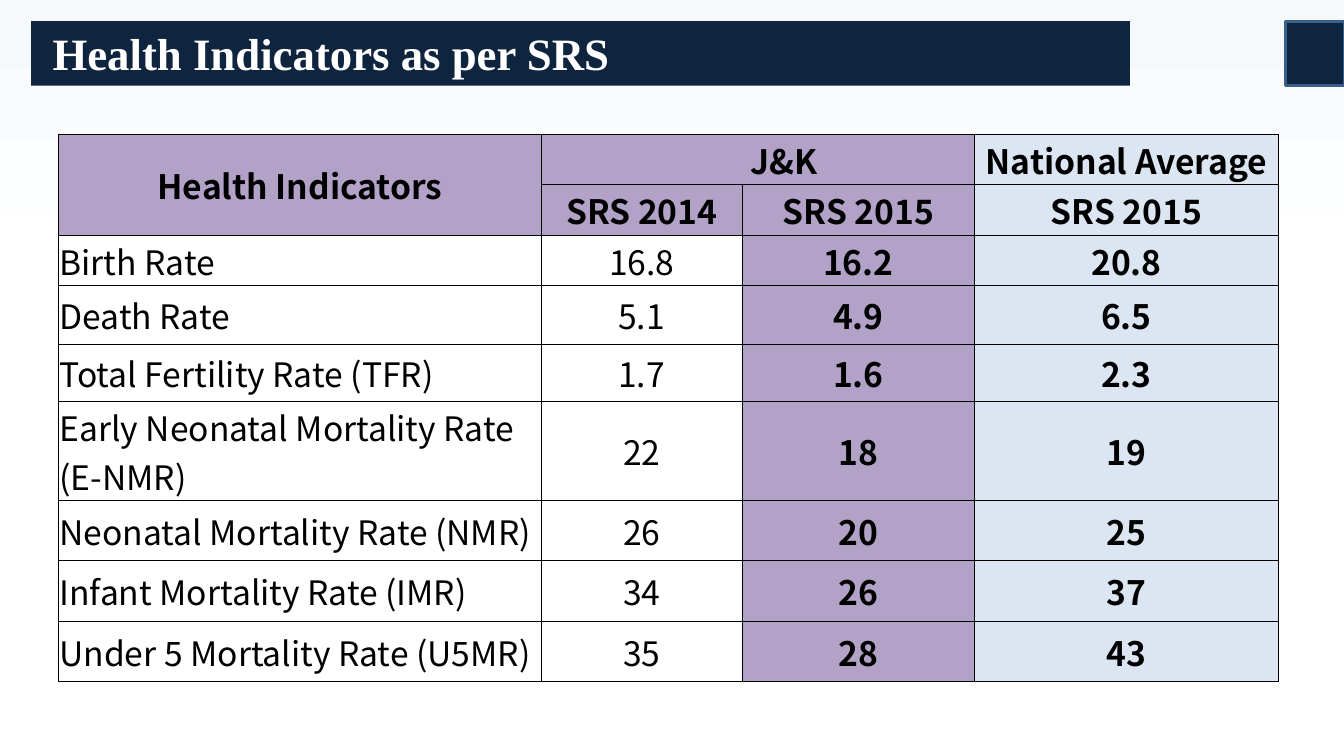
from dataclasses import dataclass

from lxml import etree
from pptx import Presentation
from pptx.dml.color import RGBColor
from pptx.enum.shapes import MSO_SHAPE
from pptx.enum.text import MSO_ANCHOR, MSO_AUTO_SIZE, PP_ALIGN
from pptx.oxml.ns import qn
from pptx.util import Pt

RECTANGLE = MSO_SHAPE.RECTANGLE
TOP, MIDDLE = MSO_ANCHOR.TOP, MSO_ANCHOR.MIDDLE
LEFT, CENTER = PP_ALIGN.LEFT, PP_ALIGN.CENTER
NO_AUTOFIT = MSO_AUTO_SIZE.NONE
TITLE_ONLY_LAYOUT = 5


@dataclass(frozen=True)
class Theme:
    navy: str = "0F243E"
    navy_edge: str = "3A5F8C"
    purple: str = "B3A2C7"
    pale_blue: str = "DCE6F2"
    sky: str = "F6F9FC"
    white: str = "FFFFFF"
    black: str = "000000"
    title_font: str = "Times New Roman"
    table_font: str = "Noto Sans CJK KR"
    title_size: float = 32
    table_size: float = 24
    border_width: float = 0.5


THEME = Theme()
BAND_TOP, BAND_HEIGHT = 15.1, 46.1
COLUMN_WIDTHS = [344.9, 143.3, 166.3, 216.7]
ROW_HEIGHTS = [36, 36, 36, 42, 41, 66, 43.2, 43.2, 43.2]
HEADER_ROWS = 2
ROWS = [
    ("Health Indicators", "J&K", "", "National Average"),
    ("", "SRS 2014", "SRS 2015", "SRS 2015"),
    ("Birth Rate", "16.8", "16.2", "20.8"),
    ("Death Rate", "5.1", "4.9", "6.5"),
    ("Total Fertility Rate (TFR)", "1.7", "1.6", "2.3"),
    ("Early Neonatal Mortality Rate\n(E-NMR)", "22", "18", "19"),
    ("Neonatal Mortality Rate (NMR)", "26", "20", "25"),
    ("Infant Mortality Rate (IMR)", "34", "26", "37"),
    ("Under 5 Mortality Rate (U5MR)", "35", "28", "43"),
]


def rgb(color):
    return RGBColor.from_string(color)


def fill_solid(fill, color):
    fill.solid()
    fill.fore_color.rgb = rgb(color)


def format_paragraph(paragraph, font_name, size, color, bold, alignment):
    paragraph.alignment = alignment
    font = paragraph.font
    font.name, font.size, font.bold = font_name, Pt(size), bold
    font.color.rgb = rgb(color)


def set_background(slide):
    fill = slide.background.fill
    fill.gradient()
    fill.gradient_angle = 270
    stops = ((0, THEME.sky), (0.37, THEME.white))
    for stop, (position, color) in zip(fill.gradient_stops, stops):
        stop.position = position
        stop.color.rgb = rgb(color)


def add_title(slide, text):
    title = slide.shapes.title
    title.left, title.top = Pt(22.3), Pt(BAND_TOP)
    title.width, title.height = Pt(784.8), Pt(BAND_HEIGHT)
    fill_solid(title.fill, THEME.navy)
    frame = title.text_frame
    frame.text = text
    frame.auto_size = NO_AUTOFIT
    frame.vertical_anchor = TOP
    frame.margin_left = Pt(15.2)
    frame.margin_top = frame.margin_bottom = Pt(3.6)
    format_paragraph(frame.paragraphs[0], THEME.title_font, THEME.title_size,
                     THEME.white, True, LEFT)


def add_corner_block(slide):
    block = slide.shapes.add_shape(
        RECTANGLE, Pt(918), Pt(BAND_TOP), Pt(42.2), Pt(BAND_HEIGHT))
    block.shadow.inherit = False
    fill_solid(block.fill, THEME.navy)
    block.line.color.rgb = rgb(THEME.navy_edge)
    block.line.width = Pt(2)


def add_cell_borders(cell):
    properties = cell._tc.get_or_add_tcPr()
    for side in ("a:lnL", "a:lnR", "a:lnT", "a:lnB"):
        line = etree.SubElement(properties, qn(side),
                                w=str(Pt(THEME.border_width)))
        fill = etree.SubElement(line, qn("a:solidFill"))
        etree.SubElement(fill, qn("a:srgbClr"), val=THEME.black)


def cell_color(row, column):
    if column == 3:
        return THEME.pale_blue
    if row < HEADER_ROWS or column == 2:
        return THEME.purple
    return None


def format_cell(cell, text, row, column):
    add_cell_borders(cell)
    color = cell_color(row, column)
    if color:
        fill_solid(cell.fill, color)
    else:
        cell.fill.background()
    cell.vertical_anchor = MIDDLE
    cell.margin_left = cell.margin_right = cell.margin_top = Pt(0.7)
    cell.margin_bottom = 0
    cell.text = text
    is_header = row < HEADER_ROWS
    alignment = CENTER if is_header or column else LEFT
    for paragraph in cell.text_frame.paragraphs:
        format_paragraph(paragraph, THEME.table_font, THEME.table_size,
                         THEME.black, is_header or column >= 2, alignment)


def add_indicator_table(slide):
    frame = slide.shapes.add_table(
        len(ROWS), len(COLUMN_WIDTHS), Pt(41.8), Pt(95.8),
        Pt(sum(COLUMN_WIDTHS)), Pt(sum(ROW_HEIGHTS)))
    table = frame.table
    table.first_row = table.horz_banding = False
    for column, width in zip(table.columns, COLUMN_WIDTHS):
        column.width = Pt(width)
    for row, height in zip(table.rows, ROW_HEIGHTS):
        row.height = Pt(height)
    for row, texts in enumerate(ROWS):
        for column, text in enumerate(texts):
            format_cell(table.cell(row, column), text, row, column)
    table.cell(0, 0).merge(table.cell(1, 0))
    region = table.cell(0, 1)
    region.merge(table.cell(0, 2))
    region.margin_left = Pt(38)


def main():
    presentation = Presentation()
    presentation.slide_width, presentation.slide_height = Pt(960), Pt(540)
    layout = presentation.slide_layouts[TITLE_ONLY_LAYOUT]
    slide = presentation.slides.add_slide(layout)
    set_background(slide)
    add_indicator_table(slide)
    add_title(slide, "Health Indicators as per SRS")
    add_corner_block(slide)
    presentation.save("out.pptx")


if __name__ == "__main__":
    main()
